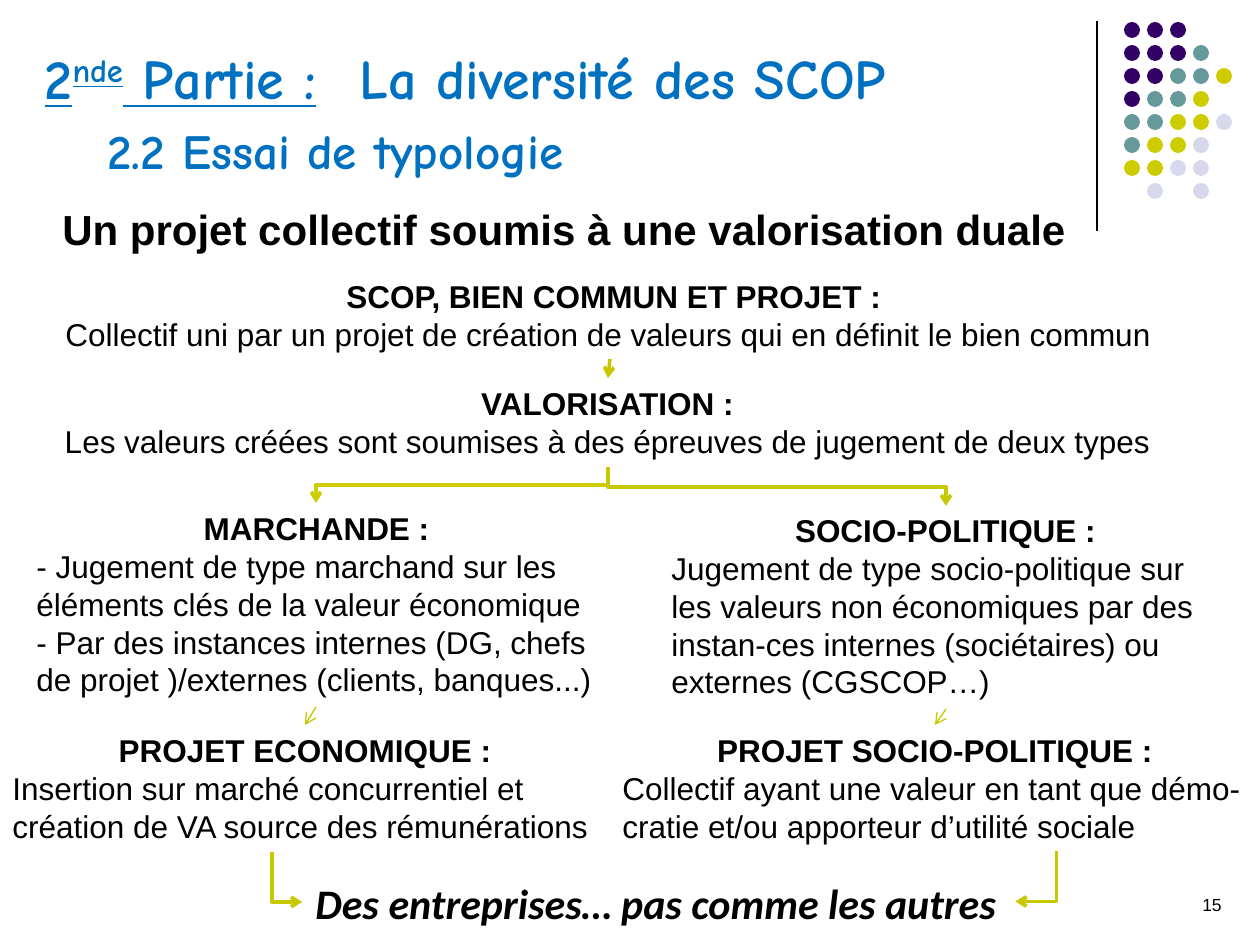
"""Build the slide on the dual valuation of a collective project."""
import pptx
import pptx.util
import pptx.dml.color
import pptx.enum.shapes
import pptx.enum.text
import pptx.oxml.ns
import lxml.etree

PX = 914400 / 126
INK, BLUE, LIME = "000000", "0070C0", "C8C800"
ALIGN = pptx.enum.text.PP_ALIGN
KIND = pptx.enum.shapes.MSO_CONNECTOR
OVAL = pptx.enum.shapes.MSO_SHAPE.OVAL
qn = pptx.oxml.ns.qn


def px(*nums):
    return [pptx.util.Emu(round(n * PX)) for n in nums]


def color(code):
    return pptx.dml.color.RGBColor.from_string(code)


deck = pptx.Presentation()
deck.slide_width, deck.slide_height = px(1260, 945)
slide = deck.slides.add_slide(deck.slide_layouts[5])
shapes = slide.shapes

dots = shapes.add_group_shape()
tints = {"P": "330066", "T": "669999", "Y": "CCCC00", "L": "D8D8EC"}
rows = ["PPP", "PPPT", "PPTTY", "PTTY", "TTYYL", "TYYL", "YYLL", " L L"]
for r, row in enumerate(rows):
    for c, key in enumerate(row):
        if key in tints:
            dot = dots.shapes.add_shape(OVAL, *px(1124 + 23 * c, 22 + 23 * r, 16, 16))
            dot.shadow.inherit = False
            dot.fill.solid()
            dot.fill.fore_color.rgb = color(tints[key])
            dot.line.fill.background()

title = shapes.title
title.left, title.top, title.width, title.height = px(32, 37, 1052, 149)
frame = title.text_frame
frame.word_wrap = True
frame.auto_size = pptx.enum.text.MSO_AUTO_SIZE.NONE
frame.vertical_anchor = pptx.enum.text.MSO_ANCHOR.BOTTOM
heads = [
    [("2", 32, True, 0), ("nde", 32, True, 30000), (" Partie :", 32, True, 0),
     ("\tLa diversité des SCOP", 32, False, 0)],
    [("\t2.2 Essai de typologie", 28, False, 0)],
]
for i, runs in enumerate(heads):
    para = frame.add_paragraph() if i else frame.paragraphs[0]
    para.alignment = ALIGN.LEFT
    para.space_after = pptx.util.Pt(6)
    for text, size, under, base in runs:
        run = para.add_run()
        run.text = text
        font = run.font
        font.name, font.size = "Comic Neue", pptx.util.Pt(size)
        font.bold, font.underline = True, under
        font.color.rgb = color(BLUE)
        if base:
            font._element.set("baseline", str(base))

L, C, R = ALIGN.LEFT, ALIGN.CENTER, ALIGN.RIGHT
texts = [
    ((1104, 888, 130, 35), True, "Arial", 10, [("15", R, False, False)]),
    ((50, 197, 1033, 63), False, "Arial", 24,
     [("Un projet collectif soumis à une valorisation duale", L, True, False)]),
    ((0, 725, 610, 127), True, "Arial", 18,
     [("PROJET ECONOMIQUE :", C, True, False),
      ("Insertion sur marché concurrentiel et", L, False, False),
      ("création de VA source des rémunérations", L, False, False)]),
    ((610, 725, 650, 127), True, "Arial", 18,
     [("PROJET SOCIO-POLITIQUE :", C, True, False),
      ("Collectif ayant une valeur en tant que démo-cratie et/ou "
       "apporteur d’utilité sociale", L, False, False)]),
    ((53, 271, 1113, 89), True, "Arial", 18,
     [(" SCOP, BIEN COMMUN ET PROJET :", C, True, False),
      ("Collectif uni par un projet de création de valeurs qui en définit "
       "le bien commun", L, False, False)]),
    ((303, 871, 712, 63), False, "Calibri", 24,
     [("Des entreprises… pas comme les autres", L, True, True)]),
    ((50, 378, 1115, 89), True, "Arial", 18,
     [("VALORISATION :", C, True, False),
      ("Les valeurs créées sont soumises à des épreuves de jugement "
       "de deux types ", C, False, False)]),
    ((24, 503, 585, 204), True, "Arial", 18,
     [("MARCHANDE :", C, True, False),
      ("- Jugement de type marchand sur les éléments clés de la valeur "
       "économique - Par des instances internes (DG, chefs de projet )"
       "/externes (clients, banques...)", L, False, False)]),
    ((659, 505, 573, 204), True, "Arial", 18,
     [("SOCIO-POLITIQUE :", C, True, False),
      ("Jugement de type socio-politique sur les valeurs non économiques "
       "par des instan-ces internes (sociétaires) ou externes (CGSCOP…)",
       L, False, False)]),
]
for box, wrap, face, size, paras in texts:
    frame = shapes.add_textbox(*px(*box)).text_frame
    frame.word_wrap = wrap
    for i, (text, align, bold, slant) in enumerate(paras):
        para = frame.add_paragraph() if i else frame.paragraphs[0]
        para.alignment = align
        run = para.add_run()
        run.text = text
        font = run.font
        font.name, font.size = face, pptx.util.Pt(size)
        font.bold, font.italic = bold, slant
        font.color.rgb = color(INK)

lines = [
    ("line", (1097, 21, 1097, 231), 0, False, INK, 0.75),
    ("line", (610, 359, 608, 378), 0, False, LIME, 2),
    ("line", (316, 707, 305, 725), 0, False, LIME, 0.75),
    ("line", (946, 709, 935, 725), 0, False, LIME, 0.75),
    ("bentConnector2", (1011, 856, 1061, 897), 90, False, LIME, 2),
    ("bentConnector2", (262, 862, 312, 892), 270, True, LIME, 2),
    ("bentConnector3", (444, 339, 480, 631), 90, False, "CCCC00", 2),
    ("bentConnector3", (758, 318, 796, 656), 270, True, LIME, 2),
]
for shape, ends, turn, flip, tint, width in lines:
    kind = KIND.STRAIGHT if shape == "line" else KIND.ELBOW
    link = shapes.add_connector(kind, *px(*ends))
    link.line.color.rgb = color(tint)
    link.line.width = pptx.util.Pt(width)
    props = link._element.spPr
    props.find(qn("a:prstGeom")).set("prst", shape)
    if turn:
        props.find(qn("a:xfrm")).set("rot", str(turn * 60000))
    if flip:
        props.find(qn("a:xfrm")).set("flipH", "1")
    if tint != INK:
        tail = lxml.etree.SubElement(props.find(qn("a:ln")), qn("a:tailEnd"))
        tail.set("type", "arrow")
    lxml.etree.SubElement(props, qn("a:effectLst"))

deck.save("out.pptx")
